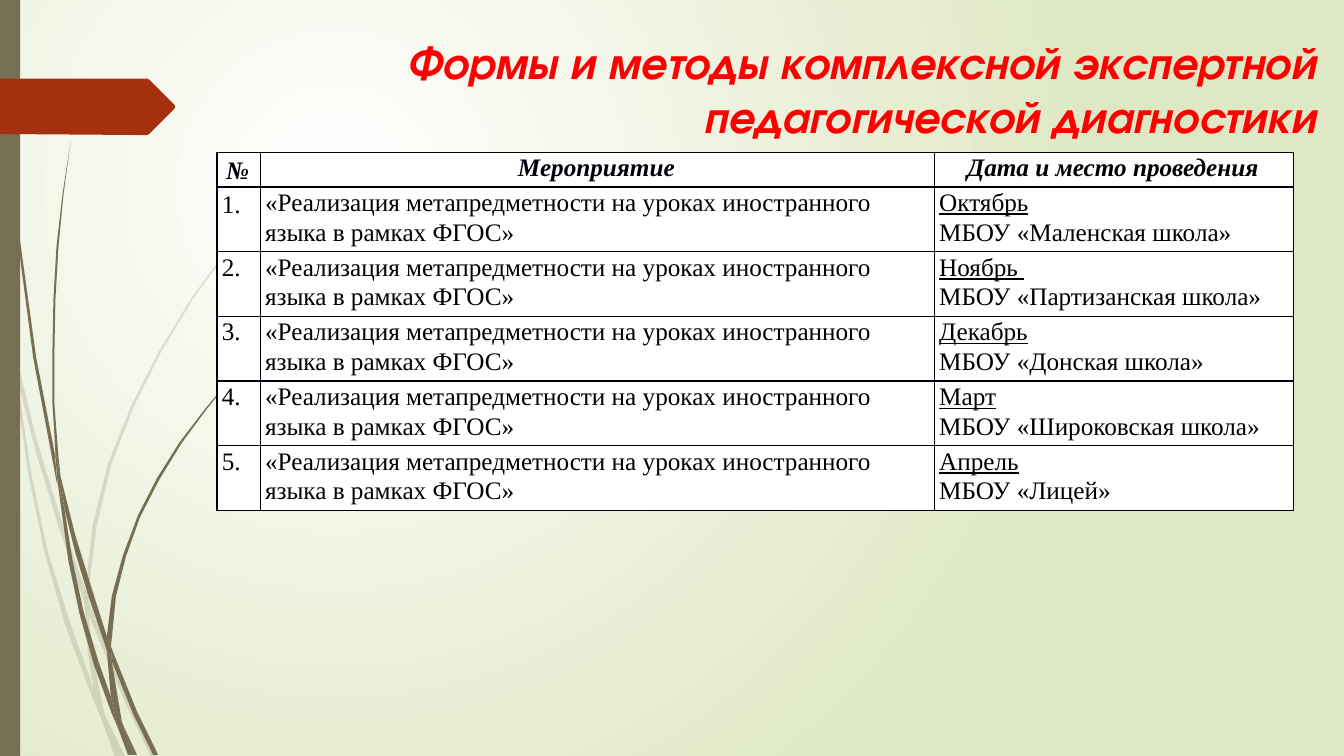
import lxml.etree
import pptx
import pptx.dml.color
import pptx.enum.shapes
import pptx.enum.text
import pptx.oxml
import pptx.oxml.ns
import pptx.util

Cm, Pt = pptx.util.Cm, pptx.util.Pt
RGBColor = pptx.dml.color.RGBColor
ALIGN = pptx.enum.text.PP_ALIGN
ANCHOR = pptx.enum.text.MSO_ANCHOR
SHAPE = pptx.enum.shapes.MSO_SHAPE
qn = pptx.oxml.ns.qn

WHITE = RGBColor(0xFF, 0xFF, 0xFF)
BLACK = RGBColor(0x00, 0x00, 0x00)
INK = RGBColor(0x00, 0x00, 0x0A)
RED = RGBColor(0xFF, 0x00, 0x00)
RUST = RGBColor(0xA5, 0x30, 0x10)
OLIVE = RGBColor(0x76, 0x6F, 0x54)
PALE_GREEN = RGBColor(0xDF, 0xE8, 0xC4)

TITLE = "Формы и методы комплексной экспертной педагогической диагностики"
HEADER = ("№", "Мероприятие", "Дата и место проведения")
EVENT = "«Реализация метапредметности на уроках иностранного языка в рамках ФГОС»"
VENUES = [
    ("Октябрь", "МБОУ «Маленская школа»"),
    ("Ноябрь ", "МБОУ «Партизанская школа»"),
    ("Декабрь", "МБОУ «Донская школа»"),
    ("Март", "МБОУ «Широковская школа»"),
    ("Апрель", "МБОУ «Лицей»"),
]
COLUMNS = (1.09, 16.99, 9.04)
HEADER_HEIGHT, ROW_HEIGHT = 0.87, 1.63

# Outlines are drawn on a grid of this pitch
GRID = Cm(0.0254)
PALE_GRASS = [
    [(11, 350), (9, 322), (0, 282), (0, 299), (10, 344)],
    [(58, 522), (84, 599), (85, 586), (62, 520), (36, 435), (14, 345), (17, 376), (36, 450)],
    [(92, 607), (88, 596), (88, 610), (123, 694), (150, 751), (155, 751), (127, 692)],
    [(119, 751), (124, 751), (105, 711)],
    [(93, 683), (70, 619), (47, 546), (31, 469), (17, 376), (11, 350), (28, 470),
     (44, 547), (65, 621), (92, 693), (101, 714), (99, 707)],
    [(84, 599), (87, 646), (93, 683), (96, 692), (105, 711), (103, 706), (91, 646),
     (88, 610), (88, 608)],
    [(88, 584), (96, 522), (110, 462), (132, 405), (160, 349), (192, 296), (229, 245),
     (268, 198), (290, 175), (312, 154), (312, 153), (289, 175), (268, 197), (228, 244),
     (191, 294), (158, 348), (130, 403), (107, 461), (92, 521), (85, 584), (85, 586),
     (88, 596)],
    [(101, 714), (114, 751), (119, 751)],
    [(88, 608), (88, 610), (88, 596), (85, 586), (84, 599)],
    [(96, 692), (93, 683), (99, 707), (101, 714), (119, 751), (105, 711)],
]
DARK_GRASS = [
    [(7, 110), (17, 233), (33, 355), (56, 477), (57, 481), (55, 457), (55, 453), (36, 355),
     (19, 232), (8, 109), (5, 48), (4, 0), (3, 0), (4, 48)],
    [(88, 592), (106, 645), (106, 633), (106, 631), (93, 590), (75, 532), (60, 472),
     (64, 505), (75, 549)],
    [(113, 649), (110, 641), (111, 656), (132, 708), (152, 749), (157, 749), (136, 706)],
    [(110, 691), (98, 657), (83, 607), (72, 556), (64, 505), (57, 477), (68, 557),
     (79, 609), (93, 659), (111, 708), (117, 722), (116, 717)],
    [(60, 472), (58, 453), (54, 401), (54, 349), (55, 297), (58, 245), (63, 193), (70, 141),
     (62, 193), (56, 245), (53, 297), (52, 349), (52, 400), (55, 449)],
    [(133, 749), (136, 749), (122, 719)],
    [(57, 477), (64, 505), (60, 472), (55, 449), (55, 453)],
    [(111, 633), (115, 592), (125, 552), (139, 513), (158, 476), (180, 440), (205, 406),
     (231, 374), (245, 359), (261, 344), (260, 344), (245, 358), (231, 373), (204, 405),
     (178, 439), (156, 474), (137, 511), (122, 551), (111, 591), (106, 631), (110, 641)],
    [(117, 722), (127, 749), (131, 749)],
    [(106, 645), (110, 691), (116, 706), (122, 719), (121, 716), (111, 656), (109, 651)],
    [(106, 645), (109, 651), (111, 656), (110, 641), (106, 631), (106, 633)],
    [(116, 706), (110, 691), (116, 717), (117, 722), (130, 749), (133, 749), (122, 719)],
]
MARKER = [(173, 108), (148, 133), (146, 134), (136, 134), (0, 133), (0, 78), (136, 78),
          (146, 78), (148, 79), (173, 104), (174, 106)]


def paint(sp, color):
    sp.shadow.inherit = False
    sp.fill.solid()
    sp.fill.fore_color.rgb = color
    sp.line.fill.background()


def add_outline(slide, points, color, alpha=None):
    builder = slide.shapes.build_freeform(*points[0], scale=GRID)
    builder.add_line_segments(points[1:], close=True)
    sp = builder.convert_to_shape()
    paint(sp, color)
    if alpha is not None:
        fill = sp._element.spPr.find(qn("a:solidFill"))[0]
        lxml.etree.SubElement(fill, qn("a:alpha"), val=str(alpha * 1000))


def set_background(slide):
    """Radial gradient, white in the upper left."""
    fill = slide.background.fill
    fill.gradient()
    for stop, color in zip(fill.gradient_stops, (WHITE, PALE_GREEN)):
        stop.color.rgb = color
    grad = slide._element.find(".//" + qn("a:gradFill"))
    grad.remove(grad.find(qn("a:lin")))
    route = lxml.etree.SubElement(grad, qn("a:path"), {"path": "circle"})
    lxml.etree.SubElement(route, qn("a:fillToRect"),
                          l="50000", t="50000", r="100000", b="100000")


def add_decoration(slide, height):
    for points in PALE_GRASS:
        add_outline(slide, points, OLIVE, alpha=20)
    for points in DARK_GRASS:
        add_outline(slide, points, OLIVE)
    paint(slide.shapes.add_shape(SHAPE.RECTANGLE, 0, 0, Cm(0.51), height), OLIVE)
    add_outline(slide, MARKER, RUST)


def set_title(slide, left, top, width, height):
    sp = slide.shapes.title
    sp.left, sp.top, sp.width, sp.height = left, top, width, height
    tf = sp.text_frame
    tf.text = TITLE
    tf.word_wrap = True
    tf.auto_size = pptx.enum.text.MSO_AUTO_SIZE.NONE
    tf.vertical_anchor = ANCHOR.MIDDLE
    p = tf.paragraphs[0]
    p.alignment = ALIGN.RIGHT
    f = p.font
    f.name, f.size, f.bold, f.italic = "TeX Gyre Adventor", Pt(32), True, True
    f.color.rgb = RED


def set_borders(cell):
    tcPr = cell._tc.get_or_add_tcPr()
    for i, side in enumerate(("lnL", "lnR", "lnT", "lnB")):
        ln = pptx.oxml.parse_xml(
            f'<a:{side} xmlns:a="http://schemas.openxmlformats.org/drawingml/2006/main" '
            f'w="12700"><a:solidFill><a:srgbClr val="{INK}"/></a:solidFill></a:{side}>')
        tcPr.insert(i, ln)


def fill_cell(cell, lines, align, color, spacing=1.07, header=False):
    """Write one paragraph per line; the first of several is underlined."""
    cell.fill.solid()
    cell.fill.fore_color.rgb = WHITE
    cell.margin_left, cell.margin_right = Cm(0.12), Cm(0.17)
    cell.margin_top = cell.margin_bottom = 0
    set_borders(cell)
    cell.text = "\n".join(lines)
    for i, p in enumerate(cell.text_frame.paragraphs):
        p.alignment, p.line_spacing = align, spacing
        f = p.font
        f.name, f.size, f.bold, f.italic = "Times New Roman", Pt(18), header, header
        f.underline = len(lines) > 1 and i == 0
        f.color.rgb = color


def add_schedule(slide, left, top):
    rows = len(VENUES) + 1
    height = HEADER_HEIGHT + ROW_HEIGHT * len(VENUES)
    table = slide.shapes.add_table(rows, len(COLUMNS), left, top,
                                   Cm(sum(COLUMNS)), Cm(height)).table
    for column, width in zip(table.columns, COLUMNS):
        column.width = Cm(width)
    for i, row in enumerate(table.rows):
        row.height = Cm(ROW_HEIGHT if i else HEADER_HEIGHT)
    for j, (text, color) in enumerate(zip(HEADER, (INK, INK, BLACK))):
        fill_cell(table.cell(0, j), [text], ALIGN.CENTER, color,
                  1.07 if j else 1.15, header=True)
    for i, venue in enumerate(VENUES, 1):
        fill_cell(table.cell(i, 0), [f"{i}."], ALIGN.JUSTIFY, INK, 1.15 if i == 1 else 1.07)
        fill_cell(table.cell(i, 1), [EVENT], ALIGN.LEFT, BLACK)
        fill_cell(table.cell(i, 2), venue, ALIGN.LEFT, BLACK)


def main():
    prs = pptx.Presentation()
    prs.slide_width, prs.slide_height = Cm(33.87), Cm(19.05)
    slide = prs.slides.add_slide(prs.slide_layouts[5])
    set_background(slide)
    add_decoration(slide, prs.slide_height)
    set_title(slide, Cm(4.67), Cm(0.73), Cm(28.75), Cm(3))
    add_schedule(slide, Cm(5.47), Cm(3.84))
    prs.save("out.pptx")


if __name__ == "__main__":
    main()
